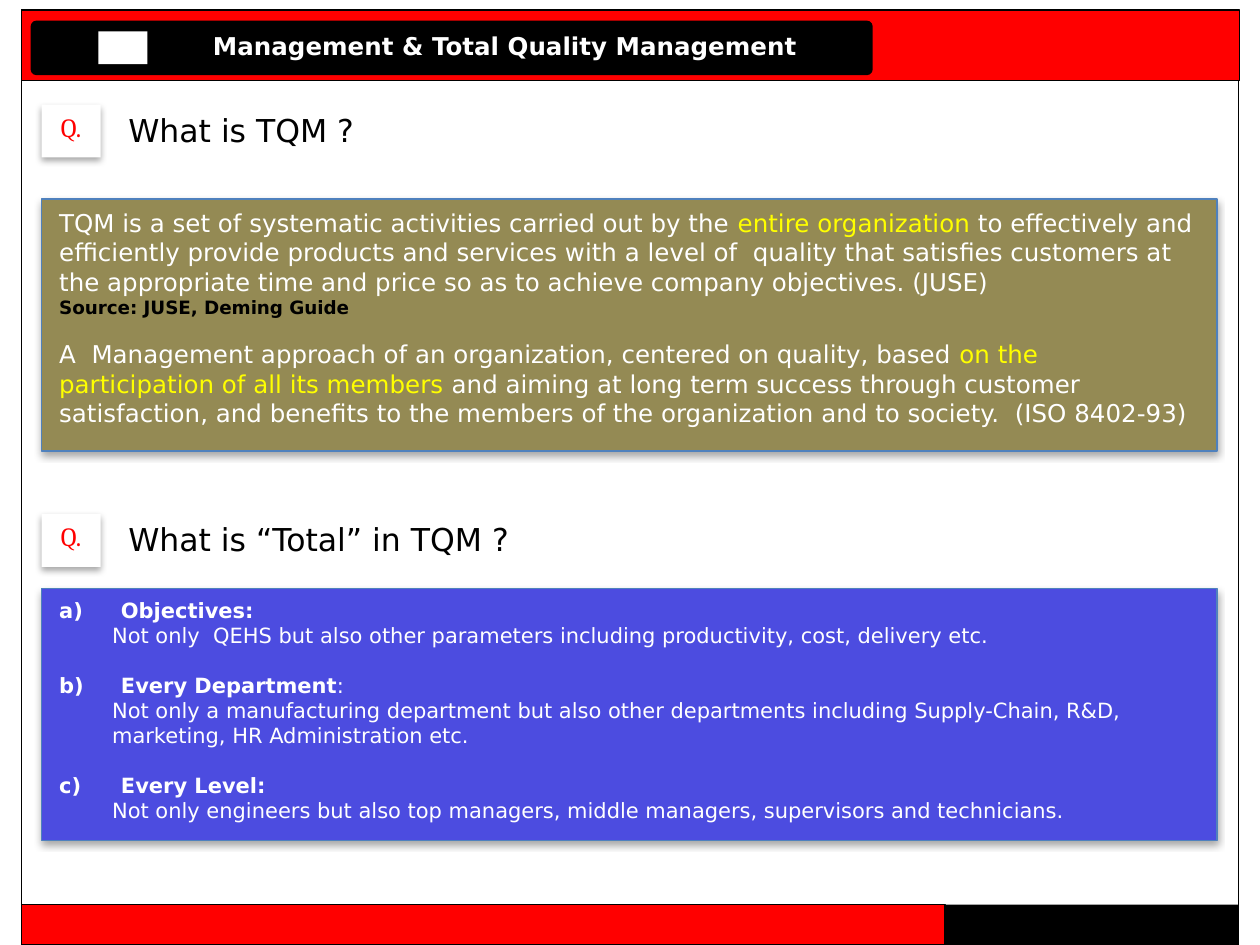
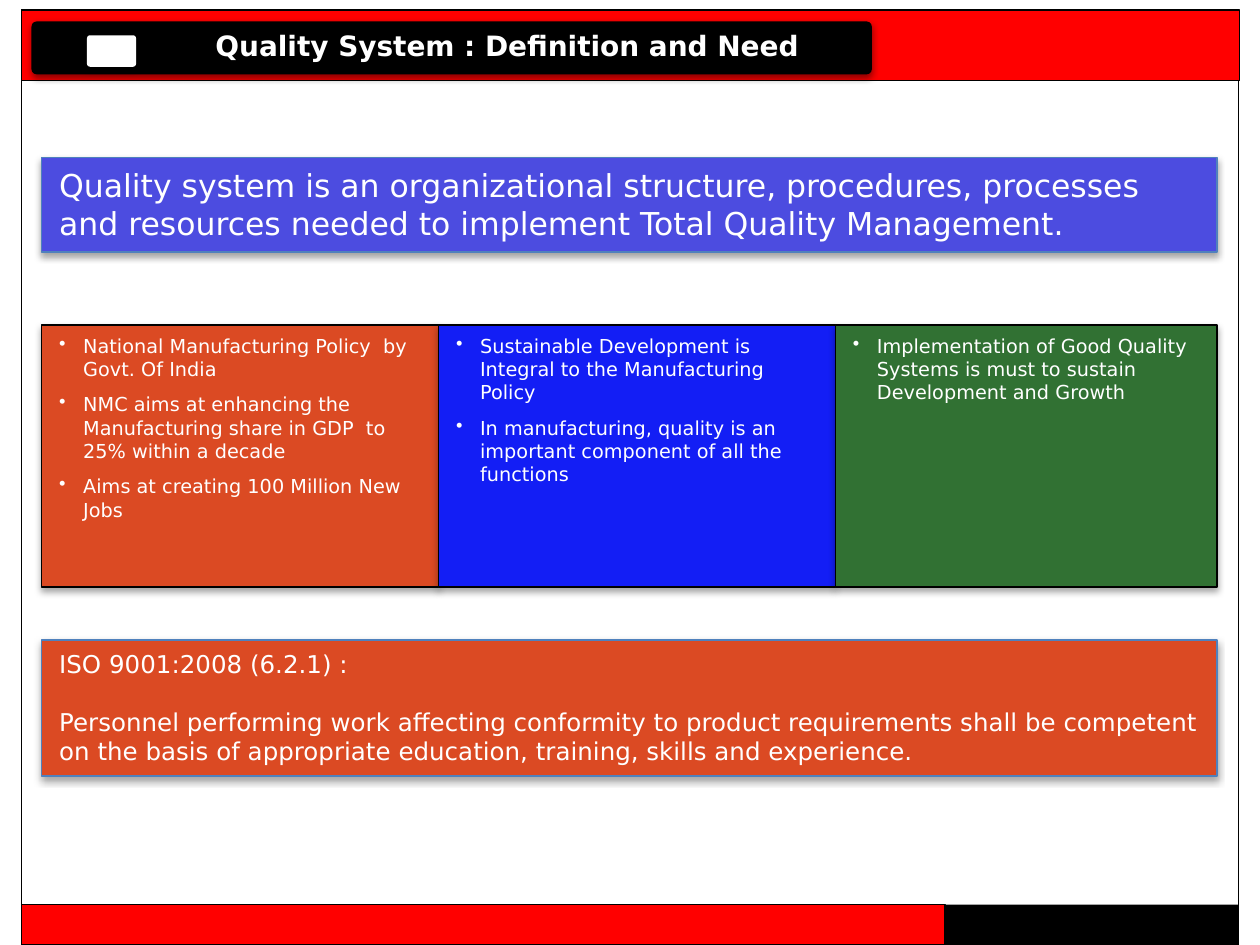
import pptx
import pptx.dml.color
import pptx.enum.shapes
import pptx.enum.text
import pptx.oxml
import pptx.oxml.ns
import pptx.util
from dataclasses import dataclass

Inches = pptx.util.Inches
Pt = pptx.util.Pt
Shape = pptx.enum.shapes.MSO_SHAPE
Anchor = pptx.enum.text.MSO_ANCHOR
Align = pptx.enum.text.PP_ALIGN


@dataclass(frozen=True)
class Theme:
    font: str = "DejaVu Sans"
    marker_font: str = "Cambria"
    black: str = "000000"
    white: str = "FFFFFF"
    red: str = "FF0000"
    yellow: str = "FFFF00"
    olive: str = "948A54"
    violet: str = "4C4CE0"
    orange: str = "DB4A23"
    blue: str = "131EF5"
    green: str = "317133"
    edge: str = "4F81BD"
    heading: float = 18
    marker: float = 15
    body: float = 14
    detail: float = 12
    bullet: float = 11
    source: float = 10.5
    hairline: float = 0.75


THEME = Theme()
LEFT, WIDTH = 0.33, 9.33  # content column
PANEL_INSETS = (0.14, 0.07)
TEXT_INSETS = (0.1, 0.05)


@dataclass
class Span:
    text: str
    size: float = THEME.body
    color: str = THEME.white
    bold: bool = False
    font: str = THEME.font


@dataclass
class Para:
    spans: list
    gap: float = 0
    margin: float = 0
    hanging: float = 0
    bullet: str = ""
    align: Align = Align.LEFT
    spacing: float = 1.0


def rgb(color):
    return pptx.dml.color.RGBColor.from_string(color)


# Shapes
def add_shadow(shape, opacity=35):
    ns = pptx.oxml.ns.nsdecls("a")
    effects = pptx.oxml.parse_xml(
        f'<a:effectLst {ns}><a:outerShdw blurRad="{Pt(4)}" dist="{Pt(2)}" '
        f'dir="5400000" rotWithShape="0"><a:srgbClr val="{THEME.black}">'
        f'<a:alpha val="{opacity * 1000}"/></a:srgbClr></a:outerShdw></a:effectLst>')
    properties = shape.element.spPr
    properties.replace(properties.find(pptx.oxml.ns.qn("a:effectLst")), effects)


def add_box(slide, place, fill=None, line=None, kind=Shape.RECTANGLE,
            line_width=THEME.hairline, shadow=0):
    box = slide.shapes.add_shape(kind, *map(Inches, place))
    box.shadow.inherit = False
    if kind == Shape.ROUNDED_RECTANGLE:
        box.adjustments[0] = 0.1
    if fill:
        box.fill.solid()
        box.fill.fore_color.rgb = rgb(fill)
    else:
        box.fill.background()
    if line:
        box.line.color.rgb = rgb(line)
        box.line.width = Pt(line_width)
    else:
        box.line.fill.background()
    if shadow:
        add_shadow(box, shadow)
    return box


# Text
def write(box, paras, insets=TEXT_INSETS, anchor=Anchor.TOP):
    frame = box.text_frame
    frame.word_wrap = True
    frame.auto_size = pptx.enum.text.MSO_AUTO_SIZE.NONE
    frame.vertical_anchor = anchor
    frame.margin_left = frame.margin_right = Inches(insets[0])
    frame.margin_top = frame.margin_bottom = Inches(insets[1])
    for number, para in enumerate(paras):
        target = frame.add_paragraph() if number else frame.paragraphs[0]
        target.alignment = para.align
        target.line_spacing = para.spacing
        target.space_before = Pt(para.gap)
        properties = target._p.get_or_add_pPr()
        properties.set("marL", str(Inches(para.margin)))
        properties.set("indent", str(-Inches(para.hanging)))
        if para.bullet:
            mark = pptx.oxml.parse_xml(
                f'<a:buChar {pptx.oxml.ns.nsdecls("a")} char="{para.bullet}"/>')
            properties.append(mark)
        for span in para.spans:
            run = target.add_run()
            run.text = span.text
            run.font.name = span.font
            run.font.size = Pt(span.size)
            run.font.bold = span.bold
            run.font.color.rgb = rgb(span.color)


def add_panel(slide, place, fill, paras, line=THEME.edge):
    panel = add_box(slide, place, fill, line, shadow=35)
    write(panel, paras, PANEL_INSETS)


def add_question(slide, top, text, width):
    marker = add_box(slide, (LEFT, top, 0.47, 0.42), THEME.white, shadow=35)
    write(marker, [Para([Span("Q.", THEME.marker, THEME.red, font=THEME.marker_font)],
                        align=Align.CENTER)])
    label = slide.shapes.add_textbox(*map(Inches, (0.92, top, width, 0.4)))
    write(label, [Para([Span(text, THEME.heading, THEME.black)])])


def bullets(texts):
    return [Para([Span(text, THEME.bullet)], gap=7.2 if number else 0,
                 margin=0.19, hanging=0.19, bullet="•")
            for number, text in enumerate(texts)]


def lettered(items):
    paras = []
    for number, (letter, name, colon_bold, detail) in enumerate(items):
        heading = [Span(f"{letter})\t{name}", THEME.detail, bold=True),
                   Span(":", THEME.detail, bold=colon_bold)]
        paras.append(Para(heading, gap=14 if number else 0, margin=0.49, hanging=0.49))
        paras.append(Para([Span(detail, THEME.detail)], margin=0.42))
    return paras


# Frame, bands and title shared by the slides
def add_slide(deck, title, size, inset, tab_kind, tab_place, bar_line=None, bar_shadow=0):
    slide = deck.slides.add_slide(deck.slide_layouts[5])
    add_box(slide, (0.17, 0.08, 9.66, 7.42), line=THEME.black)
    add_box(slide, (0.17, 0.08, 9.67, 0.56), THEME.red, THEME.black)
    add_box(slide, (0.17, 7.18, 7.33, 0.32), THEME.red, THEME.black)
    add_box(slide, (7.5, 7.18, 2.33, 0.32), THEME.black)
    add_box(slide, (0.25, 0.17, 6.67, 0.42), THEME.black, bar_line,
            Shape.ROUNDED_RECTANGLE, 1, bar_shadow)
    add_box(slide, tab_place, THEME.white, kind=tab_kind, shadow=35)
    holder = slide.shapes.title
    holder.left, holder.top, holder.width, holder.height = map(
        Inches, (1.64, 0.17, 5.28, 0.42))
    write(holder, [Para([Span(title, size, bold=True)], spacing=0.9)],
          (inset, inset), Anchor.MIDDLE)
    slide.shapes.element.append(holder.element)  # in front of the bands
    return slide


def build_tqm(deck):
    slide = add_slide(deck, "Management & Total Quality Management", 14, 0.05,
                      Shape.RECTANGLE, (0.78, 0.25, 0.39, 0.26), bar_line=THEME.black)
    add_question(slide, 0.83, "What is TQM ?", 3.92)
    add_panel(slide, (LEFT, 1.58, WIDTH, 2), THEME.olive, [
        Para([Span("TQM is a set of systematic activities carried out by the "),
              Span("entire organization ", color=THEME.yellow),
              Span("to effectively and efficiently provide products and services with "
                   "a level of  quality that satisfies customers at the appropriate time "
                   "and price so as to achieve company objectives. (JUSE)")]),
        Para([Span("Source: JUSE, Deming Guide", THEME.source, THEME.black, True)]),
        Para([Span("A  Management approach of an organization, centered on quality, based "),
              Span("on the participation of all its members", color=THEME.yellow),
              Span(" and aiming at long term success through customer satisfaction, and "
                   "benefits to the members of the organization and to society.  "
                   "(ISO 8402-93)")], gap=12.2),
    ])
    add_question(slide, 4.08, "What is “Total” in TQM ?", 4.83)
    add_panel(slide, (LEFT, 4.67, WIDTH, 2), THEME.violet, lettered([
        ("a", "Objectives", True,
         "Not only  QEHS but also other parameters including productivity, cost, "
         "delivery etc."),
        ("b", "Every Department", False,
         "Not only a manufacturing department but also other departments including "
         "Supply-Chain, R&D, marketing, HR Administration etc."),
        ("c", "Every Level", True,
         "Not only engineers but also top managers, middle managers, supervisors "
         "and technicians."),
    ]))


def build_quality_system(deck):
    slide = add_slide(deck, "Quality System : Definition and Need", 16, 0.07,
                      Shape.ROUNDED_RECTANGLE, (0.69, 0.28, 0.39, 0.25), bar_shadow=45)
    add_panel(slide, (LEFT, 1.25, WIDTH, 0.75), THEME.violet, [
        Para([Span("Quality system is an organizational structure, procedures, processes "
                   "and resources needed to implement Total Quality Management.",
                   THEME.heading)])])

    # Three adjoining policy columns
    columns = [
        (3.15, THEME.orange, ["National Manufacturing Policy  by Govt. Of India",
                              "NMC aims at enhancing the Manufacturing share in GDP  to "
                              "25% within a decade",
                              "Aims at creating 100 Million New Jobs"]),
        (3.15, THEME.blue, ["Sustainable Development is Integral to the Manufacturing Policy",
                            "In manufacturing, quality is an important component of all "
                            "the functions"]),
        (3.03, THEME.green, ["Implementation of Good Quality Systems is must to sustain "
                             "Development and Growth"]),
    ]
    left = LEFT
    for width, fill, texts in columns:
        add_panel(slide, (left, 2.58, width, 2.08), fill, bullets(texts), THEME.black)
        left += width

    add_panel(slide, (LEFT, 5.08, WIDTH, 1.08), THEME.orange, [
        Para([Span("ISO 9001:2008 (6.2.1) :")]),
        Para([Span("Personnel performing work affecting conformity to product requirements "
                   "shall be competent on the basis of appropriate education, training, "
                   "skills and experience.")], gap=16.4)])


def main():
    deck = pptx.Presentation()
    deck.slide_width, deck.slide_height = Inches(10), Inches(7.5)
    build_tqm(deck)
    build_quality_system(deck)
    deck.save("out.pptx")


if __name__ == "__main__":
    main()
